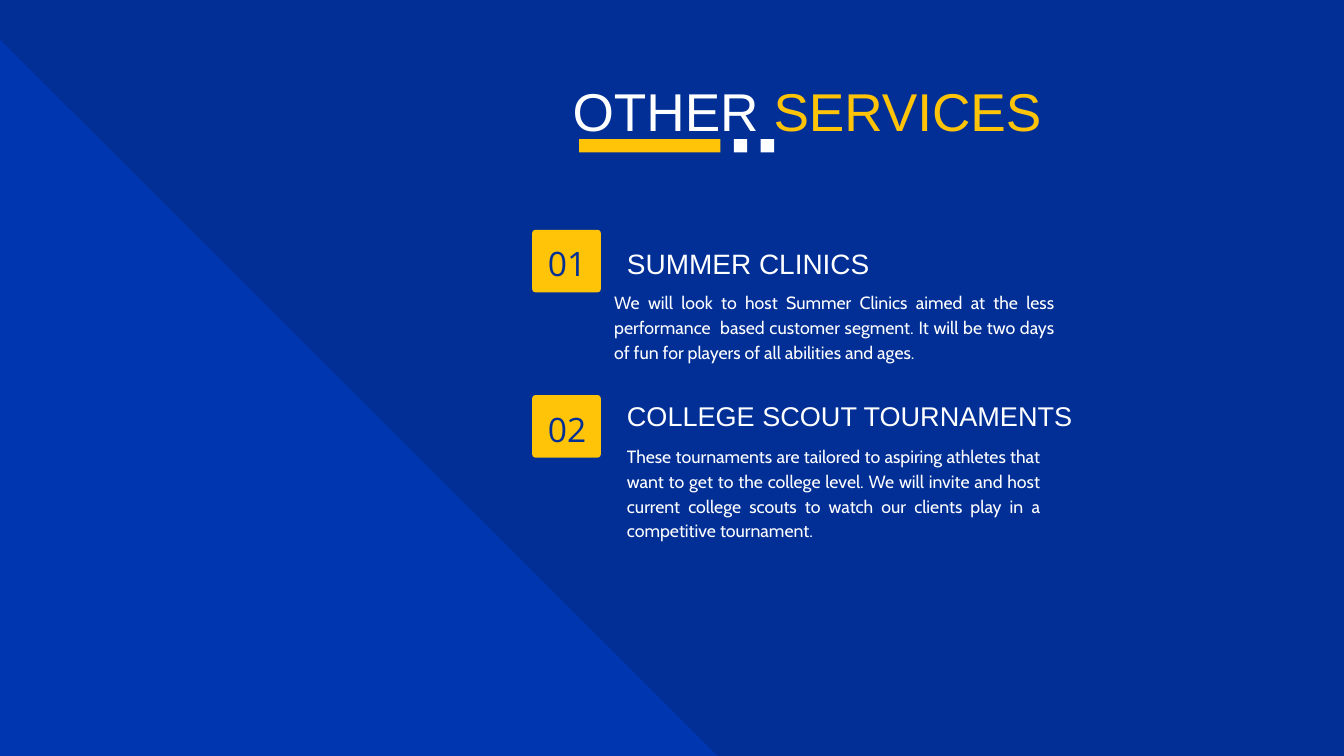
from pptx import Presentation
from pptx.dml.color import RGBColor
from pptx.enum.shapes import MSO_SHAPE
from pptx.enum.text import MSO_ANCHOR, MSO_AUTO_SIZE, PP_ALIGN
from pptx.util import Inches, Pt

COLORS = {"navy": "012F96", "blue": "0036AF", "gold": "FFC408", "white": "FFFFFF"}

SERVICES = [
    {"num": "01", "top": 3.42, "name": "SUMMER CLINICS", "size": 30, "lead": 42,
     "head": (9.33, 3.59, 6.17, 0.56), "body": (9.14, 4.29, 6.55, 1.1),
     "text": "We will look to host Summer Clinics aimed at the less performance  based "
             "customer segment. It will be two days of fun for players of all abilities "
             "and ages."},
    {"num": "02", "top": 5.88, "name": "COLLEGE SCOUT TOURNAMENTS", "size": 29, "lead": 40.6,
     "head": (9.33, 5.86, 6.94, 0.55), "body": (9.33, 6.58, 6.15, 1.47),
     "text": "These tournaments are tailored to aspiring athletes that want to get to the "
             "college level. We will invite and host current college scouts to watch our "
             "clients play in a competitive tournament."},
]


def color(name):
    return RGBColor.from_string(COLORS[name])


def add_block(slide, kind, box, fill):
    shape = slide.shapes.add_shape(kind, *map(Inches, box))
    shape.shadow.inherit = False
    shape.fill.solid()
    shape.fill.fore_color.rgb = color(fill)
    shape.line.fill.background()
    return shape


def set_frame(frame):
    """Clear the margins, wrap and anchor at the top; return the first paragraph."""
    frame.margin_left = frame.margin_right = frame.margin_top = frame.margin_bottom = 0
    frame.word_wrap = True
    frame.auto_size = MSO_AUTO_SIZE.NONE
    frame.vertical_anchor = MSO_ANCHOR.TOP
    return frame.paragraphs[0]


def style(para, font, size, lead, align, tint="white"):
    para.alignment = align
    para.line_spacing = Pt(lead)
    para.font.name = font
    para.font.size = Pt(size)
    para.font.color.rgb = color(tint)


def add_text(slide, box, text, *look):
    para = set_frame(slide.shapes.add_textbox(*map(Inches, box)).text_frame)
    para.text = text
    style(para, *look)


def add_title(slide, left, top, width, height):
    title = slide.shapes.title
    title.left, title.top, title.width, title.height = map(Inches, (left, top, width, height))
    para = set_frame(title.text_frame)
    style(para, "Arial", 57, 79.8, PP_ALIGN.LEFT)
    for word, tint in (("OTHER ", "white"), ("SERVICES", "gold")):
        run = para.add_run()
        run.text = word
        run.font.color.rgb = color(tint)

    side = gap = 0.2
    x, y = left + 0.1, top + height
    for wide, tint in ((2.1, "gold"), (side, "white"), (side, "white")):
        add_block(slide, MSO_SHAPE.RECTANGLE, (x, y, wide, side), tint)
        x += wide + gap


def add_service(slide, left, item):
    top = item["top"]
    badge = add_block(slide, MSO_SHAPE.ROUNDED_RECTANGLE, (left, top, 1.02, 0.93), "gold")
    badge.adjustments[0] = 0.05
    add_text(slide, (left + 0.02, top + 0.1, 1, 0.67), item["num"],
             "Open Sans", 36, 50.4, PP_ALIGN.CENTER, "navy")
    add_text(slide, item["head"], item["name"],
             "Arial", item["size"], item["lead"], PP_ALIGN.JUSTIFY)
    add_text(slide, item["body"], item["text"], "Cabin", 19, 26.6, PP_ALIGN.JUSTIFY)


def main():
    deck = Presentation()
    deck.slide_width, deck.slide_height = Inches(20), Inches(11.25)
    slide = deck.slides.add_slide(deck.slide_layouts[5])
    slide.background.fill.solid()
    slide.background.fill.fore_color.rgb = color("navy")
    add_block(slide, MSO_SHAPE.RIGHT_TRIANGLE, (0, 0.59, 10.68, 10.66), "blue")
    add_title(slide, 8.52, 1, 8.28, 1.07)
    for item in SERVICES:
        add_service(slide, 7.92, item)
    deck.save("out.pptx")


if __name__ == "__main__":
    main()
